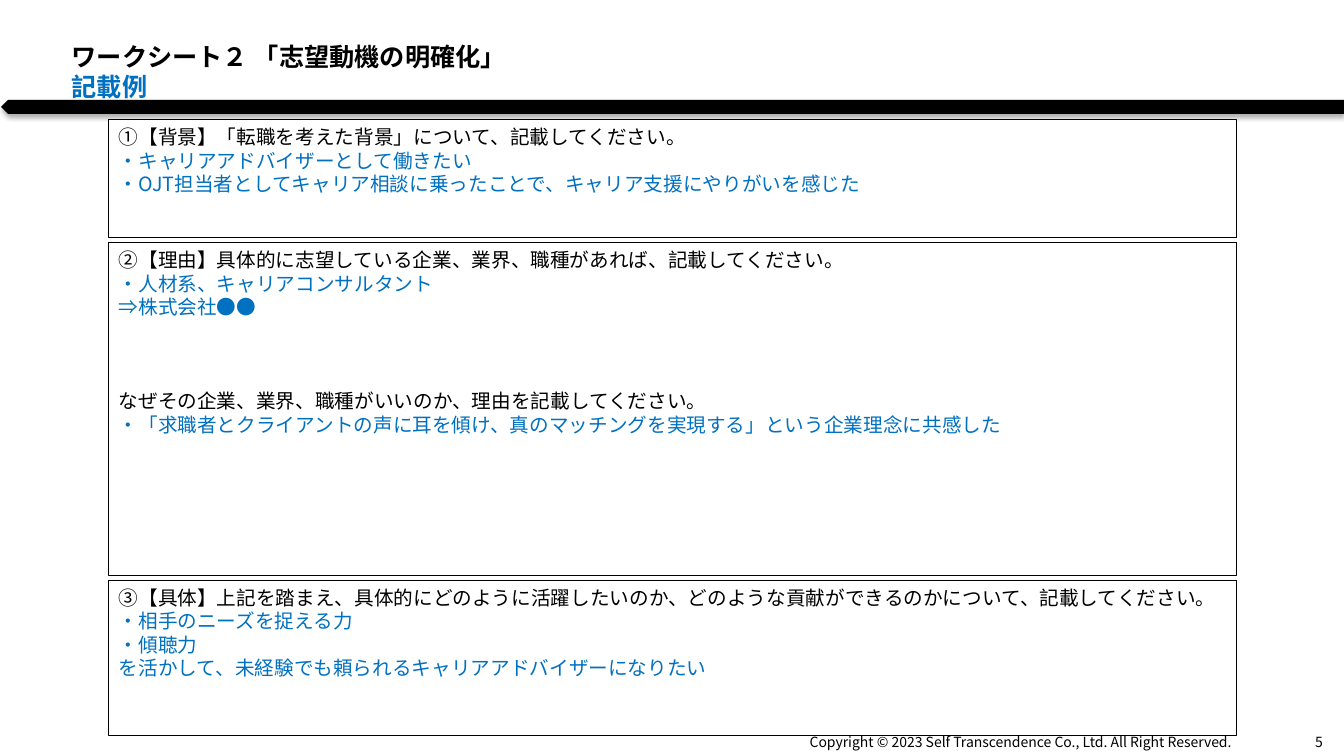
from lxml import etree
from pptx import Presentation
from pptx.dml.color import RGBColor
from pptx.enum.shapes import MSO_SHAPE
from pptx.enum.text import MSO_ANCHOR, MSO_AUTO_SIZE, PP_ALIGN
from pptx.oxml.ns import qn
from pptx.util import Inches, Pt

RECT, PLATE = MSO_SHAPE.RECTANGLE, MSO_SHAPE.PENTAGON
TOP, BOTTOM = MSO_ANCHOR.TOP, MSO_ANCHOR.BOTTOM
LEFT, RIGHT = PP_ALIGN.LEFT, PP_ALIGN.RIGHT
FIXED = MSO_AUTO_SIZE.NONE
TITLE_ONLY = 5

FONT = "Noto Sans CJK JP"
COLORS = {"ink": "000000", "answer": "0070C0", "paper": "FFFFFF"}
LEADING = 1.2
BODY = 14


def color(name):
    return RGBColor.from_string(COLORS[name])


class Sheet:
    """Draws on one slide; lengths are percent of its width and height."""

    def __init__(self, deck):
        self.wide, self.high = deck.slide_width, deck.slide_height
        self.slide = deck.slides.add_slide(deck.slide_layouts[TITLE_ONLY])
        self.shapes = self.slide.shapes

    def place(self, x, y, w, h):
        return (int(self.wide * x / 100), int(self.high * y / 100),
                int(self.wide * w / 100), int(self.high * h / 100))

    def style(self, run, size, name, bold=False):
        run.font.name, run.font.size, run.font.bold = FONT, Pt(size), bold
        run.font.color.rgb = color(name)
        east = etree.SubElement(run.font._element, qn("a:ea"))
        east.set("typeface", FONT)

    def lay(self, frame, size, align, anchor):
        frame.word_wrap, frame.auto_size = True, FIXED
        frame.vertical_anchor = anchor
        for par in frame.paragraphs:
            par.alignment = align
            par.line_spacing = Pt(size * LEADING)

    def title(self, head, tail, area):
        shape = self.shapes.title
        shape.left, shape.top, shape.width, shape.height = self.place(*area)
        frame = shape.text_frame
        frame.text = f"{head}\v{tail}"
        self.lay(frame, 18, LEFT, TOP)
        for run, name in zip(frame.paragraphs[0].runs, ("ink", "answer")):
            self.style(run, 18, name, True)

    def band(self, area):
        """Draw the black bar that points left, with a soft shadow below."""
        bar = self.shapes.add_shape(PLATE, *self.place(*area))
        bar.fill.solid()
        bar.fill.fore_color.rgb = color("ink")
        bar.line.fill.background()
        props = bar._element.spPr
        props.find(qn("a:xfrm")).set("flipH", "1")
        bar.shadow.inherit = False
        glow = etree.SubElement(
            props.find(qn("a:effectLst")), qn("a:outerShdw"),
            blurRad=str(Pt(3.5)), dist=str(Pt(2.2)), dir="5400000",
            rotWithShape="0")
        tint = etree.SubElement(glow, qn("a:srgbClr"), val=COLORS["ink"])
        etree.SubElement(tint, qn("a:alpha"), val="32000")

    def panel(self, lines, area):
        """Draw a framed box; each line is (color name, text, blank lines above)."""
        box = self.shapes.add_shape(RECT, *self.place(*area))
        box.shadow.inherit = False
        box.fill.solid()
        box.fill.fore_color.rgb = color("paper")
        box.line.color.rgb = color("ink")
        box.line.width = Pt(0.75)
        frame = box.text_frame
        frame.text = "\n".join(text for _, text, _ in lines)
        self.lay(frame, BODY, LEFT, TOP)
        for par, (name, _, skip) in zip(frame.paragraphs, lines):
            if skip:
                par.space_before = Pt(skip * BODY * LEADING)
            self.style(par.runs[0], BODY, name)

    def note(self, text, area):
        box = self.shapes.add_textbox(*self.place(*area))
        box.text_frame.text = text
        self.lay(box.text_frame, 10, RIGHT, BOTTOM)
        self.style(box.text_frame.paragraphs[0].runs[0], 10, "ink")


PANELS = [
    (15.6, [
        ("ink", "①【背景】「転職を考えた背景」について、記載してください。", 0),
        ("answer", "・キャリアアドバイザーとして働きたい", 0),
        ("answer", "・OJT担当者としてキャリア相談に乗ったことで、キャリア支援にやりがいを感じた", 0),
    ]),
    (44, [
        ("ink", "②【理由】具体的に志望している企業、業界、職種があれば、記載してください。", 0),
        ("answer", "・人材系、キャリアコンサルタント", 0),
        ("answer", "⇒株式会社●●", 0),
        ("ink", "なぜその企業、業界、職種がいいのか、理由を記載してください。", 3),
        ("answer", "・「求職者とクライアントの声に耳を傾け、真のマッチングを実現する」という企業理念に共感した", 0),
    ]),
    (20.53, [
        ("ink", "③【具体】上記を踏まえ、具体的にどのように活躍したいのか、どのような貢献ができるのかについて、記載してください。", 0),
        ("answer", "・相手のニーズを捉える力", 0),
        ("answer", "・傾聴力", 0),
        ("answer", "を活かして、未経験でも頼られるキャリアアドバイザーになりたい", 0),
    ]),
]


def main():
    deck = Presentation()
    deck.slide_width, deck.slide_height = Inches(13.33), Inches(7.5)
    sheet = Sheet(deck)
    sheet.band((0.08, 13.2, 99.92, 1.87))
    top, gap = 15.87, 0.67
    for height, lines in PANELS:
        sheet.panel(lines, (8.1, top, 83.87, height))
        top += height + gap
    sheet.title("ワークシート２ 「志望動機の明確化」", "記載例", (4.58, 4.8, 37.43, 8.4))
    sheet.note("5", (92.72, 94.67, 6.45, 5.2))
    sheet.note("Copyright © 2023 Self Transcendence Co., Ltd. All Right Reserved.",
               (44.49, 95.2, 47.86, 4.67))
    deck.save("out.pptx")


if __name__ == "__main__":
    main()
